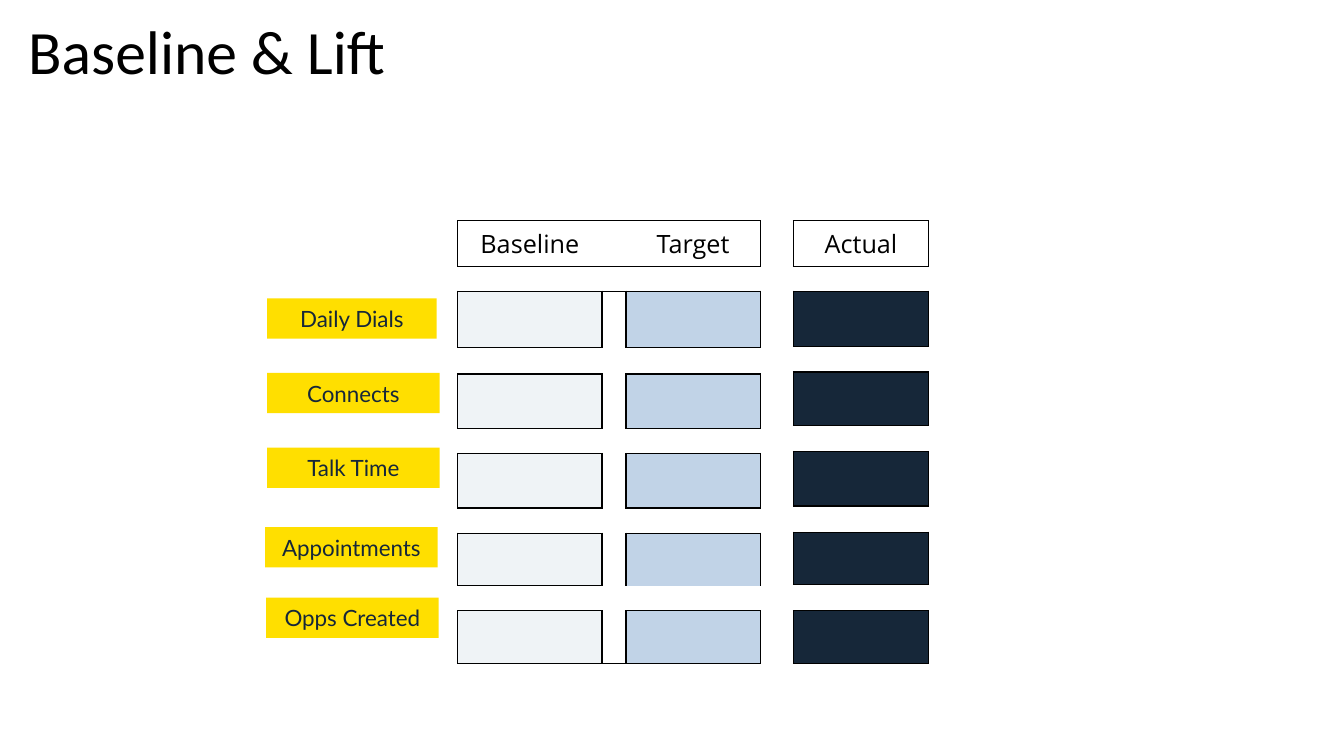
from dataclasses import dataclass

from lxml.etree import SubElement
from pptx import Presentation
from pptx.dml.color import RGBColor
from pptx.enum.shapes import MSO_SHAPE as Shape
from pptx.enum.text import MSO_ANCHOR as Anchor, PP_ALIGN as Align
from pptx.oxml.ns import qn
from pptx.util import Inches, Pt

COLORS = {
    "black": "000000",
    "white": "FFFFFF",
    "yellow": "FFDF00",
    "navy": "162739",
    "pale": "EFF3F6",
    "blue": "C1D3E7",
}
NO_STYLE = "{2D5ABB26-0587-4C30-8999-92F81FD0307C}"
BOX = "LRTB"


@dataclass
class MetricLabel:
    text: str
    left: float
    top: float
    width: float


@dataclass
class Grid:
    left: float
    top: float
    columns: list[float]
    rows: list[float]


LABELS = [
    MetricLabel("Daily Dials", 2.65, 2.96, 1.68),
    MetricLabel("Connects", 2.65, 3.7, 1.71),
    MetricLabel("Talk Time", 2.65, 4.44, 1.71),
    MetricLabel("Appointments", 2.63, 5.23, 1.71),
    MetricLabel("Opps Created", 2.64, 5.93, 1.71),
]
PLAN_GRID = Grid(4.54, 2.19, [1.43, 0.23, 1.33],
                 [0.45, 0.25, 0.56, 0.26, 0.54, 0.25, 0.54, 0.25, 0.52, 0.25, 0.52, 0.01])
ACTUAL_GRID = Grid(7.87, 2.19, [1.34],
                   [0.45, 0.25, 0.55, 0.25, 0.53, 0.26, 0.54, 0.26, 0.52, 0.26, 0.52])


def color(name: str) -> RGBColor:
    return RGBColor.from_string(COLORS[name])


def write(paragraph, text: str, font: str, size: float, ink: str, align) -> None:
    paragraph.alignment = align
    run = paragraph.add_run()
    run.text = text
    for name, value in {"name": font, "size": Pt(size)}.items():
        setattr(run.font, name, value)
    run.font.color.rgb = color(ink)


def set_borders(cell, sides: str, hidden: bool = False) -> None:
    """Draw black 1 pt lines on the given sides, in the order L, R, T, B."""
    properties = cell._tc.get_or_add_tcPr()
    for side in sides:
        line = SubElement(properties, qn(f"a:ln{side}"), w=str(Pt(1)))
        if hidden:
            SubElement(line, qn("a:noFill"))
        else:
            fill = SubElement(line, qn("a:solidFill"))
            SubElement(fill, qn("a:srgbClr"), val=COLORS["black"])


def set_fill(cell, name: str) -> None:
    cell.fill.solid()
    cell.fill.fore_color.rgb = color(name)


def write_header(cell, text: str) -> None:
    cell.margin_top = cell.margin_bottom = Inches(0.05)
    write(cell.text_frame.paragraphs[0], text, "Open Sans", 18, "black", Align.CENTER)


def add_grid(slide, grid: Grid):
    """Add an unstyled table whose empty cells do not stretch their rows."""
    frame = slide.shapes.add_table(
        len(grid.rows), len(grid.columns), Inches(grid.left), Inches(grid.top),
        Inches(sum(grid.columns)), Inches(sum(grid.rows)))
    table = frame.table
    table.first_row = table.horz_banding = False
    frame._element.find(".//" + qn("a:tableStyleId")).text = NO_STYLE
    for column, width in zip(table.columns, grid.columns):
        column.width = Inches(width)
    for row, height in zip(table.rows, grid.rows):
        row.height = Inches(height)
    for cell in table.iter_cells():
        cell.margin_top = cell.margin_bottom = 0
        cell.vertical_anchor = Anchor.MIDDLE
        paragraph = cell.text_frame.paragraphs[0]
        SubElement(paragraph._p, qn("a:endParaRPr"), sz="100")
    return table


def add_plan_table(slide) -> None:
    table = add_grid(slide, PLAN_GRID)
    for column, (text, sides) in enumerate([("Baseline", "LTB"), ("", "TB"), ("Target", "RTB")]):
        cell = table.cell(0, column)
        set_borders(cell, sides)
        if text:
            write_header(cell, text)
    set_borders(table.cell(1, 1), "T")

    # Value rows: two boxes with an open gap between them
    for row in range(2, 11, 2):
        for column, (fill, sides) in enumerate([("pale", BOX), (None, "LR"), ("blue", BOX)]):
            cell = table.cell(row, column)
            set_borders(cell, sides)
            if fill:
                set_fill(cell, fill)

    # Merged spacer and closing rule
    table.cell(9, 1).merge(table.cell(9, 2))
    set_borders(table.cell(9, 1), BOX, hidden=True)
    table.cell(11, 0).merge(table.cell(11, 2))
    set_borders(table.cell(11, 0), "T")
    for row, column in [(9, 0), (9, 1), (11, 0)]:
        set_fill(table.cell(row, column), "white")


def add_actual_table(slide) -> None:
    table = add_grid(slide, ACTUAL_GRID)
    for row in range(len(ACTUAL_GRID.rows)):
        cell = table.cell(row, 0)
        is_gap = row % 2 == 1
        set_borders(cell, "TB" if is_gap else BOX)
        if row and not is_gap:
            set_fill(cell, "navy")
    set_fill(table.cell(9, 0), "white")
    write_header(table.cell(0, 0), "Actual")


def add_label(slide, label: MetricLabel) -> None:
    shape = slide.shapes.add_shape(
        Shape.RECTANGLE, Inches(label.left), Inches(label.top), Inches(label.width), Inches(0.4))
    shape.shadow.inherit = False
    shape.fill.solid()
    shape.fill.fore_color.rgb = color("yellow")
    shape.line.fill.background()
    frame = shape.text_frame
    frame.word_wrap = False
    frame.vertical_anchor = Anchor.MIDDLE
    write(frame.paragraphs[0], label.text, "Lato", 16, "navy", Align.CENTER)


def add_title(slide, text: str) -> None:
    title = slide.shapes.title
    box = {"left": 0.28, "top": 0.21, "width": 12.78, "height": 0.8}
    for name, value in box.items():
        setattr(title, name, Inches(value))
    frame = title.text_frame
    for side in ("left", "right", "top", "bottom"):
        setattr(frame, f"margin_{side}", 0)
    frame.vertical_anchor = Anchor.TOP
    paragraph = frame.paragraphs[0]
    paragraph.line_spacing = 0.9
    write(paragraph, text, "Calibri", 44, "black", Align.LEFT)


def main() -> None:
    presentation = Presentation()
    presentation.slide_width = Inches(13.33)
    presentation.slide_height = Inches(7.5)
    slide = presentation.slides.add_slide(presentation.slide_layouts[5])

    add_title(slide, "Baseline & Lift")
    add_plan_table(slide)
    add_actual_table(slide)
    for label in LABELS:
        add_label(slide, label)

    presentation.save("out.pptx")


if __name__ == "__main__":
    main()
